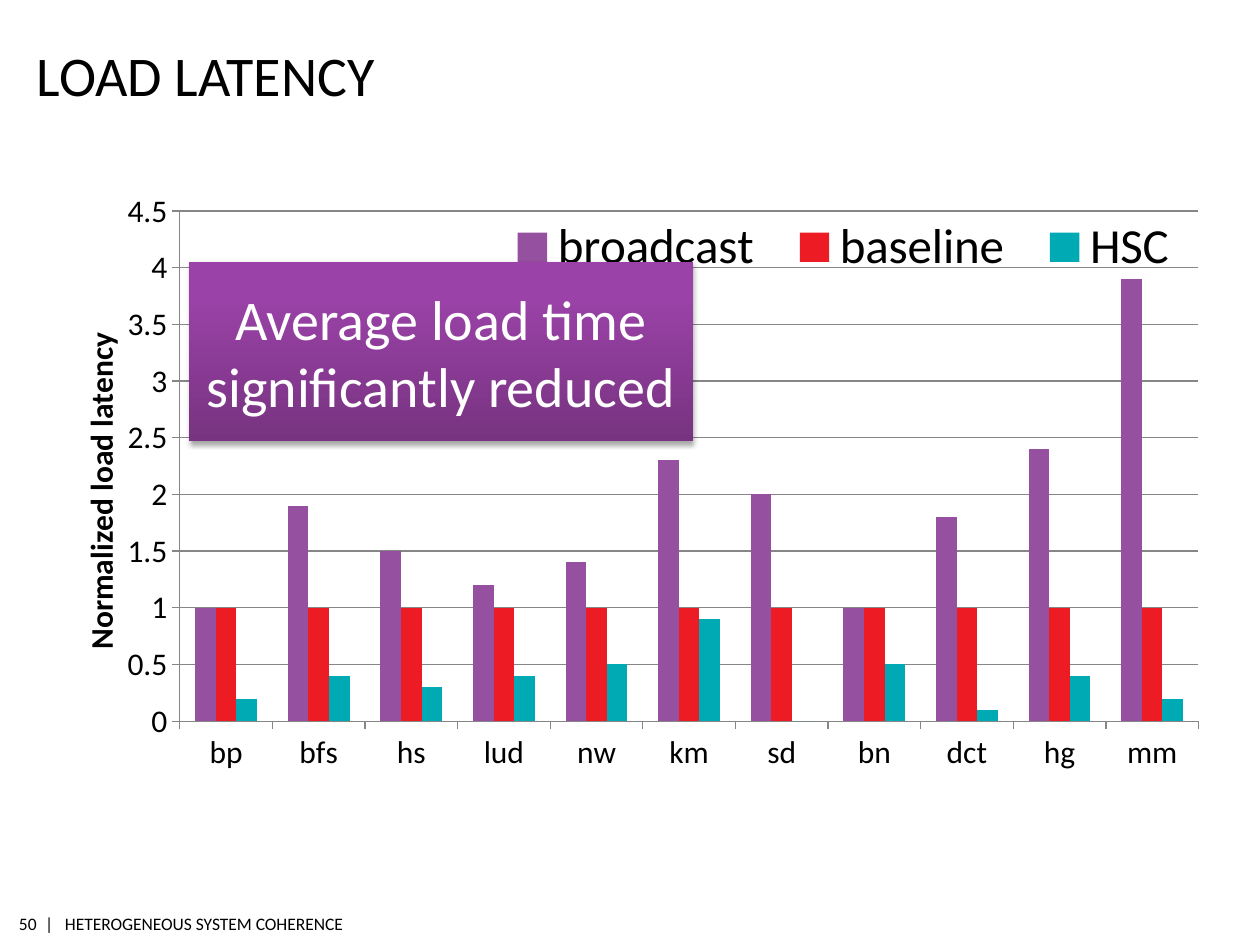
from lxml import etree
from copy import deepcopy
from pptx import Presentation
from pptx.chart.data import CategoryChartData
from pptx.dml.color import RGBColor
from pptx.enum.chart import XL_CHART_TYPE as ChartType, XL_LEGEND_POSITION as LegendPosition
from pptx.enum.chart import XL_TICK_MARK as TickMark
from pptx.enum.shapes import MSO_SHAPE as Shape
from pptx.enum.text import MSO_ANCHOR as Anchor, PP_ALIGN as Align
from pptx.oxml import parse_xml
from pptx.oxml.ns import nsdecls, qn
from pptx.util import Cm, Pt

FONT = "Calibri"
COLORS = {
    "text": "000000", "callout text": "FFFFFF", "axis": "868686",
    "broadcast": "9650A0", "baseline": "ED1C24", "HSC": "00AAB5",
}
CALLOUT_STOPS = [(0, "773380"), (0.8, "9A42A7"), (1, "9C40A9")]
CALLOUT_ADJUSTMENTS = [0.41, 1.05, 0.7, 2.11]

# text, box (left, top, width, height in cm), size, alignment, anchor, wrap
TEXTS = [
    ("|   HETEROGENEOUS SYSTEM COHERENCE", (0.91, 18.24, 6.58, 0.66), 10, Align.LEFT, Anchor.MIDDLE, False),
    ("50", (0.33, 18.24, 0.41, 0.66), 10, Align.RIGHT, Anchor.MIDDLE, False),
    ("LOAD LATENCY", (0.74, 0.86, 21.34, 1.32), 32, Align.LEFT, Anchor.BOTTOM, True),
]
CALLOUT = ("Average load time significantly reduced", (3.81, 5.28, 10.16, 3.61))

CHART_BOX = (0.76, 3.84, 23.88, 13.72)
BENCHMARKS = ["bp", "bfs", "hs", "lud", "nw", "km", "sd", "bn", "dct", "hg", "mm"]
LATENCIES = {
    "broadcast": [1, 1.9, 1.5, 1.2, 1.4, 2.3, 2, 1, 1.8, 2.4, 3.9],
    "baseline": [1] * len(BENCHMARKS),
    "HSC": [0.2, 0.4, 0.3, 0.4, 0.5, 0.9, 0, 0.5, 0.1, 0.4, 0.2],
}


def rgb(name):
    return RGBColor.from_string(COLORS[name])


def in_cm(box):
    return [Cm(length) for length in box]


def set_font(font, size, color="text", bold=None):
    font.name, font.size, font.bold = FONT, Pt(size), bold
    font.color.rgb = rgb(color)


def add_text(slide, text, box, size, alignment, anchor, wrap):
    frame = slide.shapes.add_textbox(*in_cm(box)).text_frame
    frame.margin_left = frame.margin_right = frame.margin_bottom = 0
    frame.margin_top = Cm(0.1)
    frame.word_wrap, frame.vertical_anchor = wrap, anchor
    paragraph = frame.paragraphs[0]
    paragraph.text, paragraph.alignment = text, alignment
    set_font(paragraph.font, size)


def place(element, index, **fractions):
    """Give a chart part a manual layout, in fractions of the chart."""
    for old in element.findall(qn("c:layout")):
        element.remove(old)
    layout = etree.Element(qn("c:layout"))
    manual = etree.SubElement(layout, qn("c:manualLayout"))
    if "inner" in fractions:
        etree.SubElement(manual, qn("c:layoutTarget"), val="inner")
        del fractions["inner"]
    for key in ("x", "y"):
        etree.SubElement(manual, qn(f"c:{key}Mode"), val="edge")
    for key, value in fractions.items():
        etree.SubElement(manual, qn(f"c:{key}"), val=str(value))
    element.insert(index, layout)


def add_latency_chart(slide):
    data = CategoryChartData()
    data.categories = BENCHMARKS
    for name, values in LATENCIES.items():
        data.add_series(name, values)
    chart = slide.shapes.add_chart(ChartType.COLUMN_CLUSTERED, *in_cm(CHART_BOX), data).chart
    set_font(chart.font, 18)
    chart.has_title = False

    plot = chart.plots[0]
    plot.gap_width, plot.overlap, plot.vary_by_categories = 150, 0, False
    for series in plot.series:
        series.format.fill.solid()
        series.format.fill.fore_color.rgb = rgb(series.name)

    value_axis = chart.value_axis
    value_axis.minimum_scale, value_axis.maximum_scale, value_axis.major_unit = 0, 4.5, 0.5
    value_axis.has_major_gridlines = True
    value_axis.tick_labels.number_format = "General"
    value_axis.tick_labels.number_format_is_linked = False
    for axis in (value_axis, chart.category_axis):
        axis.major_tick_mark = TickMark.OUTSIDE
        axis.format.line.color.rgb = rgb("axis")
    value_axis.major_gridlines.format.line.color.rgb = rgb("axis")
    title = value_axis.axis_title
    title.text_frame.text = "Normalized load latency"
    set_font(title.text_frame.paragraphs[0].font, 18, bold=True)

    chart.has_legend = True
    legend = chart.legend
    legend.position, legend.include_in_layout = LegendPosition.RIGHT, True
    set_font(legend.font, 28)

    place(plot._element.getparent(), 0, inner=True, x=0.12, y=0.03, w=0.86, h=0.75)
    place(title._element, 1, x=0.03, y=0.2)
    place(legend._element, 1, x=0.38, y=0.04, w=0.6, h=0.08)


def add_callout(slide, text, box):
    shape = slide.shapes.add_shape(Shape.LINE_CALLOUT_1_ACCENT_BAR, *in_cm(box))
    for index, value in enumerate(CALLOUT_ADJUSTMENTS):
        shape.adjustments[index] = value
    shape.line.fill.background()

    shape.fill.gradient()
    shape.fill.gradient_angle = 90
    properties = shape._element.spPr
    stop_list = properties.find(".//" + qn("a:gsLst"))
    stop_list.append(deepcopy(stop_list[-1]))
    for stop, (position, color) in zip(shape.fill.gradient_stops, CALLOUT_STOPS):
        stop.position = position
        stop.color.rgb = RGBColor.from_string(color)

    properties.append(parse_xml(
        f'<a:effectLst {nsdecls("a")}><a:outerShdw blurRad="{Pt(3.1)}" dist="{Pt(1.8)}" '
        'dir="5400000" rotWithShape="0"><a:srgbClr val="000000"><a:alpha val="35000"/>'
        '</a:srgbClr></a:outerShdw></a:effectLst>'))

    frame = shape.text_frame
    frame.word_wrap, frame.vertical_anchor = True, Anchor.MIDDLE
    paragraph = frame.paragraphs[0]
    paragraph.text, paragraph.alignment = text, Align.CENTER
    set_font(paragraph.font, 32, "callout text")


def main():
    presentation = Presentation()
    presentation.slide_width, presentation.slide_height = Cm(25.4), Cm(19.05)
    slide = presentation.slides.add_slide(presentation.slide_layouts[6])
    for text in TEXTS:
        add_text(slide, *text)
    add_latency_chart(slide)
    add_callout(slide, *CALLOUT)
    presentation.save("out.pptx")


if __name__ == "__main__":
    main()
